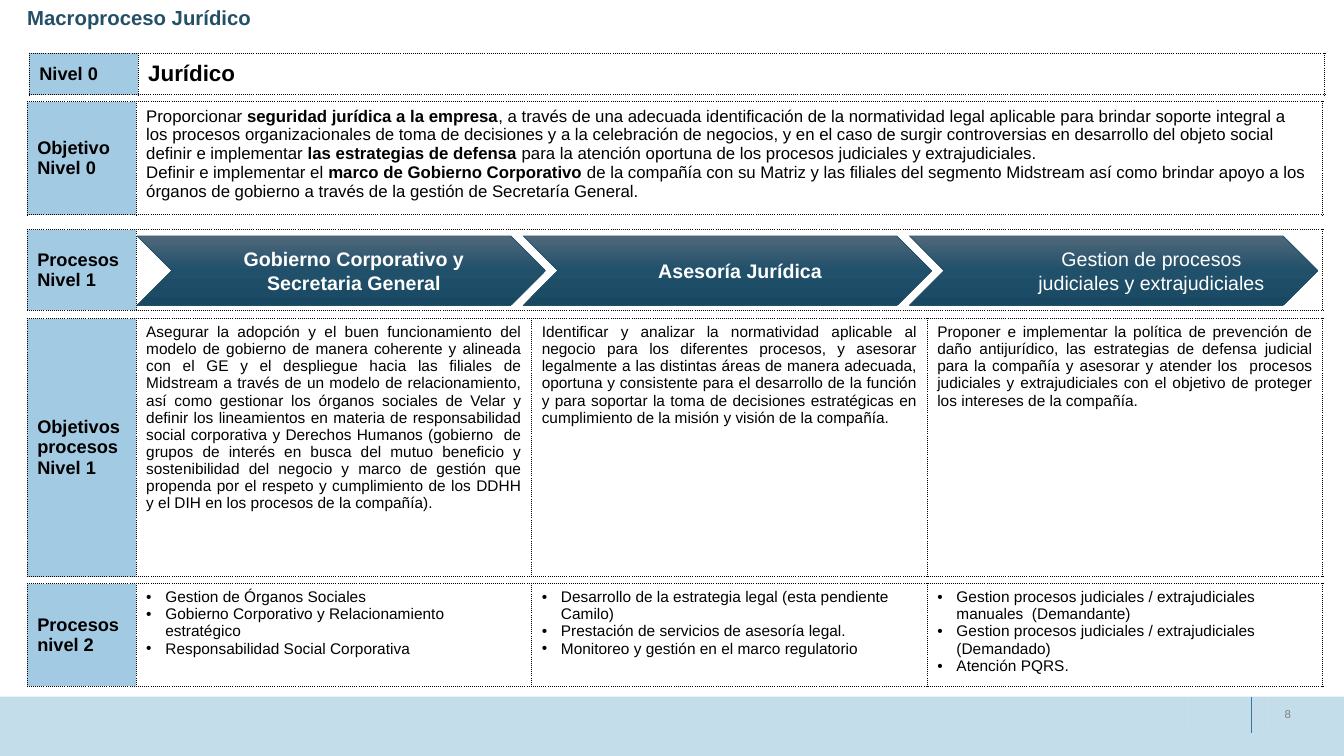
from dataclasses import dataclass

from lxml.etree import SubElement
from pptx import Presentation
from pptx.dml.color import RGBColor
from pptx.enum.shapes import MSO_CONNECTOR, MSO_SHAPE
from pptx.enum.text import MSO_ANCHOR, PP_ALIGN
from pptx.oxml import parse_xml
from pptx.oxml.ns import nsdecls, qn
from pptx.util import Inches, Pt


@dataclass(frozen=True)
class Theme:
    font: str = "Arial"
    text: str = "000000"
    white: str = "FFFFFF"
    title: str = "234F67"
    label: str = "A2CAE2"
    footer: str = "C3DDEB"
    footer_rule: str = "33779D"
    footer_tick: str = "C7DFEE"
    page_number: str = "808080"
    chevron: tuple = ("50687A", "20506A", "194862")
    page_size: float = 8.2
    detail_size: float = 11
    body_size: float = 12
    label_size: float = 13
    chevron_size: float = 14
    title_size: float = 14.5
    heading_size: float = 16


THEME = Theme()
TABLE_LEFT, TABLE_WIDTH, LABEL_WIDTH = 0.27, 12.85, 1.08

OBJECTIVE = [
    [
        ("Proporcionar", False),
        (" seguridad jurídica a la empresa", True),
        (", a través de una adecuada identificación de la normatividad legal aplicable para brindar "
         "soporte integral a los procesos organizacionales de toma de decisiones y a la celebración de "
         "negocios, y en el caso de surgir controversias en desarrollo del objeto social definir e "
         "implementar", False),
        (" las estrategias de defensa ", True),
        ("para la atención oportuna de los procesos judiciales y extrajudiciales.", False),
    ],
    [
        ("Definir e implementar el ", False),
        ("marco de Gobierno Corporativo ", True),
        ("de la compañía con su Matriz y las filiales del segmento Midstream así como brindar apoyo a "
         "los órganos de gobierno a través de la gestión de Secretaría General.", False),
    ],
]

PROCESS_OBJECTIVES = [
    "Asegurar la adopción y el buen funcionamiento del modelo de gobierno de manera coherente y alineada "
    "con el GE y el despliegue hacia las filiales de Midstream a través de un modelo de relacionamiento, "
    "así como gestionar los órganos sociales de Velar y definir los lineamientos en materia de "
    "responsabilidad social corporativa y Derechos Humanos (gobierno  de grupos de interés en busca del "
    "mutuo beneficio y sostenibilidad del negocio y marco de gestión que propenda por el respeto y "
    "cumplimiento de los DDHH y el DIH en los procesos de la compañía).",
    "Identificar y analizar la normatividad aplicable al negocio para los diferentes procesos, y asesorar "
    "legalmente a las distintas áreas de manera adecuada, oportuna y consistente para el desarrollo de la "
    "función y para soportar la toma de decisiones estratégicas en cumplimiento de la misión y visión de "
    "la compañía. ",
    "Proponer e implementar la política de prevención de daño antijurídico, las estrategias de defensa "
    "judicial para la compañía y asesorar y atender los  procesos judiciales y extrajudiciales con el "
    "objetivo de proteger los intereses de la compañía.",
]

SUBPROCESSES = [
    ["Gestion de Órganos Sociales",
     "Gobierno Corporativo y Relacionamiento estratégico",
     "Responsabilidad Social Corporativa"],
    ["Desarrollo de la estrategia legal (esta pendiente Camilo)",
     "Prestación de servicios de asesoría legal.",
     "Monitoreo y gestión en el marco regulatorio"],
    ["Gestion procesos judiciales / extrajudiciales manuales  (Demandante)",
     "Gestion procesos judiciales / extrajudiciales (Demandado)",
     "Atención PQRS."],
]

CHEVRONS = [
    ("Gobierno Corporativo y Secretaria General", True, 0),
    ("Asesoría Jurídica", True, 0),
    ("Gestion de procesos judiciales y extrajudiciales", False, 0.5),
]


def color(value):
    return RGBColor.from_string(value)


def write(frame, paragraphs, size, ink=THEME.text, bold=False, align=PP_ALIGN.LEFT,
          indent=0, bullet=False):
    for index, runs in enumerate(paragraphs):
        paragraph = frame.paragraphs[0] if index == 0 else frame.add_paragraph()
        paragraph.alignment = align
        properties = paragraph._p.get_or_add_pPr()
        properties.set("marL", str(Inches(indent)))
        properties.set("indent", str(Inches(-indent if bullet else 0)))
        if bullet:
            SubElement(properties, qn("a:buFont")).set("typeface", THEME.font)
            SubElement(properties, qn("a:buChar")).set("char", "•")
        for text, strong in [(runs, bold)] if isinstance(runs, str) else runs:
            run = paragraph.add_run()
            run.text = text
            run.font.name = THEME.font
            run.font.size = Pt(size)
            run.font.bold = strong
            run.font.color.rgb = color(ink)


def set_margins(frame, left, top, right, bottom):
    frame.margin_left, frame.margin_top = Inches(left), Inches(top)
    frame.margin_right, frame.margin_bottom = Inches(right), Inches(bottom)


def add_text(slide, box, text, size, ink, bold=False, wrap=True, anchor=MSO_ANCHOR.TOP):
    frame = slide.shapes.add_textbox(*map(Inches, box)).text_frame
    frame.word_wrap = wrap
    frame.vertical_anchor = anchor
    set_margins(frame, 0, 0, 0, 0)
    write(frame, [text], size, ink, bold)


def add_rule(slide, x, bottom, ink, width):
    line = slide.shapes.add_connector(
        MSO_CONNECTOR.STRAIGHT, Inches(x), Inches(6.91), Inches(x), Inches(bottom))
    line.line.color.rgb = color(ink)
    line.line.width = Pt(width)
    SubElement(line._element.spPr, qn("a:effectLst"))


def add_footer(slide):
    band = slide.shapes.add_shape(
        MSO_SHAPE.RECTANGLE, 0, Inches(6.91), Inches(13.33), Inches(0.59))
    band.shadow.inherit = False
    band.fill.solid()
    band.fill.fore_color.rgb = color(THEME.footer)
    band.line.fill.background()
    add_rule(slide, 12.41, 7.27, THEME.footer_rule, 0.25)
    for x in (12.57, 11.79):
        add_rule(slide, x, 7.25, THEME.footer_tick, 0.5)
    add_text(slide, (12.74, 7.01, 0.21, 0.14), "8", THEME.page_size, THEME.page_number,
             wrap=False, anchor=MSO_ANCHOR.MIDDLE)


def style_cell(cell, fill=None):
    properties = cell._tc.get_or_add_tcPr()
    for side in ("lnL", "lnR", "lnT", "lnB"):
        properties.append(parse_xml(
            f'<a:{side} {nsdecls("a")} w="{Pt(1)}"><a:solidFill><a:srgbClr val="{THEME.text}"/>'
            f'</a:solidFill><a:prstDash val="sysDot"/></a:{side}>'))
    if fill:
        cell.fill.solid()
        cell.fill.fore_color.rgb = color(fill)
    else:
        cell.fill.background()
    set_margins(cell, 0.1, 0.05, 0.1, 0.05)


def add_band(slide, top, height, label, columns=1, left=TABLE_LEFT):
    table = slide.shapes.add_table(1, columns + 1, Inches(left), Inches(top),
                                   Inches(TABLE_WIDTH), Inches(height)).table
    table.first_row = table.horz_banding = False
    for index, column in enumerate(table.columns):
        column.width = Inches((TABLE_WIDTH - LABEL_WIDTH) / columns if index else LABEL_WIDTH)
    label_cell, *content = table.rows[0].cells
    style_cell(label_cell, THEME.label)
    label_cell.vertical_anchor = MSO_ANCHOR.MIDDLE
    write(label_cell.text_frame, label, THEME.label_size, bold=True)
    for cell in content:
        style_cell(cell)
    return content


def add_chevron(slide, left, text, bold, indent):
    shape = slide.shapes.add_shape(
        MSO_SHAPE.CHEVRON, Inches(left), Inches(2.34), Inches(4.05), Inches(0.69))
    shape.shadow.inherit = False
    shape.fill.gradient()
    shape.fill.gradient_angle = 270
    stops = shape._element.spPr.find(qn("a:gradFill")).find(qn("a:gsLst"))
    stops.clear()
    for index, ink in enumerate(THEME.chevron):
        stop = SubElement(stops, qn("a:gs"), pos=str(index * 50000))
        SubElement(stop, qn("a:srgbClr"), val=ink)
    shape.line.color.rgb = color(THEME.title)
    shape.line.width = Pt(0.5)
    frame = shape.text_frame
    frame.word_wrap = True
    frame.vertical_anchor = MSO_ANCHOR.MIDDLE
    set_margins(frame, 0.35, 0.05, 0.1, 0.05)
    write(frame, [text], THEME.chevron_size, THEME.white, bold, PP_ALIGN.CENTER, indent)


def main():
    presentation = Presentation()
    presentation.slide_width, presentation.slide_height = Inches(13.33), Inches(7.5)
    slide = presentation.slides.add_slide(presentation.slide_layouts[6])
    add_footer(slide)
    add_text(slide, (0.27, 0.05, 12.66, 0.34), "Macroproceso Jurídico",
             THEME.title_size, THEME.title, bold=True)

    heading, = add_band(slide, 0.53, 0.41, ["Nivel 0"], left=0.29)
    heading.vertical_anchor = MSO_ANCHOR.MIDDLE
    write(heading.text_frame, ["Jurídico"], THEME.heading_size, bold=True)

    objective, = add_band(slide, 1.01, 1.12, ["Objetivo", "Nivel 0"])
    write(objective.text_frame, OBJECTIVE, THEME.body_size)

    add_band(slide, 2.28, 0.8, ["Procesos", "Nivel 1"])
    for index, (text, bold, indent) in enumerate(CHEVRONS):
        add_chevron(slide, 1.36 + 3.83 * index, text, bold, indent)

    cells = add_band(slide, 3.16, 2.56, ["Objetivos procesos Nivel 1"], columns=3)
    for cell, text in zip(cells, PROCESS_OBJECTIVES):
        write(cell.text_frame, [text], THEME.detail_size, align=PP_ALIGN.JUSTIFY)

    cells = add_band(slide, 5.79, 1.02, ["Procesos nivel 2"], columns=3)
    for cell, items in zip(cells, SUBPROCESSES):
        write(cell.text_frame, items, THEME.detail_size, indent=0.19, bullet=True)

    presentation.save("out.pptx")


if __name__ == "__main__":
    main()
